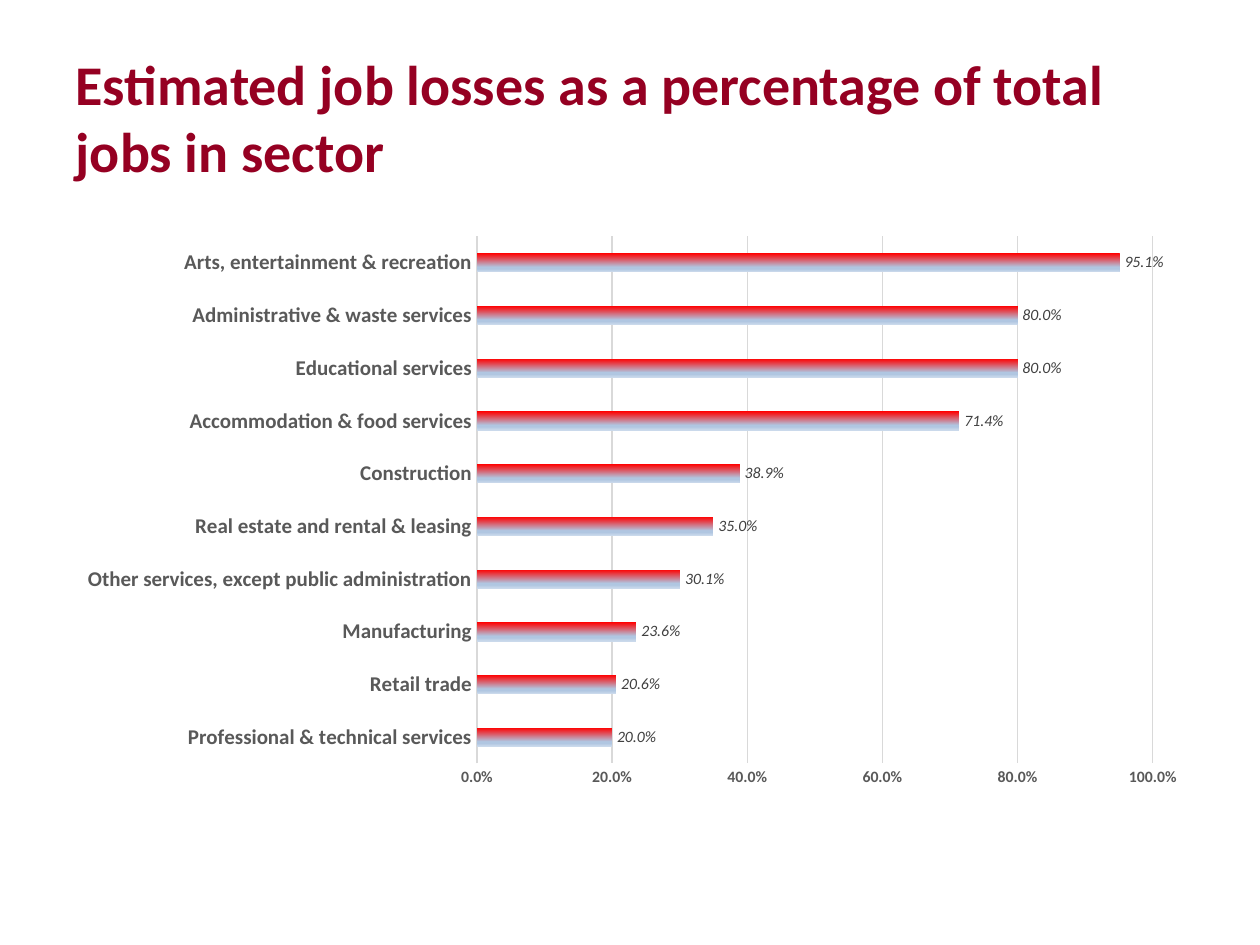
from dataclasses import dataclass

from lxml.etree import SubElement
from pptx import Presentation
from pptx.chart.data import CategoryChartData
from pptx.dml.color import RGBColor
from pptx.enum.chart import XL_CHART_TYPE, XL_LABEL_POSITION, XL_TICK_MARK
from pptx.enum.text import MSO_ANCHOR, PP_ALIGN
from pptx.oxml import parse_xml
from pptx.oxml.ns import nsdecls, qn
from pptx.util import Pt

EMU_PER_PX = 9144
TITLE = "Estimated job losses as a percentage of total jobs in sector"
JOB_LOSSES = {
    "Professional & technical services": 0.2,
    "Retail trade": 0.206,
    "Manufacturing": 0.236,
    "Other services, except public administration": 0.301,
    "Real estate and rental & leasing": 0.35,
    "Construction": 0.389,
    "Accommodation & food services": 0.714,
    "Educational services": 0.8,
    "Administrative & waste services": 0.8,
    "Arts, entertainment & recreation": 0.951,
}


@dataclass(frozen=True)
class Theme:
    """Colours, type sizes and formats of the deck."""

    font: str = "Calibri"
    title: str = "950022"
    axis: str = "595959"
    label: str = "404040"
    grid: str = "D9D9D9"
    bar_stops: tuple = ((0, "FF0000"), (74, "B0C6E1"), (83, "B0C6E1"), (100, "CAD9EB"))
    title_size: int = 32
    category_size: int = 12
    small_size: int = 9
    line_width: float = 0.75
    percent: str = "0.0%"


def px(*lengths):
    """Turn pixel lengths into EMU."""
    return [length * EMU_PER_PX for length in lengths]


class SlideBuilder:
    """Holds the theme and the current slide."""

    def __init__(self, page, theme):
        """Keep the page and its theme."""
        self.page = page
        self.theme = theme

    def style_font(self, font, size, color, bold=False, italic=False):
        """Apply the theme face with the given size and colour."""
        font.name = self.theme.font
        font.size = Pt(size)
        font.bold = bold
        font.italic = italic
        font.color.rgb = RGBColor.from_string(color)

    def style_line(self, line):
        """Draw a thin grid-coloured line."""
        line.color.rgb = RGBColor.from_string(self.theme.grid)
        line.width = Pt(self.theme.line_width)

    def add_title(self, text, left, top, width, height):
        """Fill and place the title placeholder."""
        box = self.page.shapes.title
        box.left, box.top, box.width, box.height = px(left, top, width, height)
        frame = box.text_frame
        frame.text = text
        frame.word_wrap = True
        frame.vertical_anchor = MSO_ANCHOR.MIDDLE
        para = frame.paragraphs[0]
        para.alignment = PP_ALIGN.LEFT
        self.style_font(para.font, self.theme.title_size, self.theme.title, bold=True)

    def add_bar_chart(self, values, left, top, width, height, plot_area):
        """Add a horizontal percentage bar chart."""
        data = CategoryChartData(number_format=self.theme.percent)
        data.categories = list(values)
        data.add_series("Series 1", list(values.values()))
        frame = self.page.shapes.add_chart(
            XL_CHART_TYPE.BAR_CLUSTERED, *px(left, top, width, height), data
        )
        chart = frame.chart
        chart.has_title = False
        chart.has_legend = False
        chart.font.name = self.theme.font
        chart.font.size = Pt(10)
        self.place_plot(chart, plot_area)
        self.style_axes(chart)
        self.style_bars(chart.plots[0])

    def place_plot(self, chart, plot_area):
        """Fix the inner plot area as fractions of the chart."""
        area = chart._chartSpace.find(".//" + qn("c:plotArea"))
        for old in area.findall(qn("c:layout")):
            area.remove(old)
        layout = parse_xml(f"<c:layout {nsdecls('c')}/>")
        manual = SubElement(layout, qn("c:manualLayout"))
        settings = {"layoutTarget": "inner", "xMode": "edge", "yMode": "edge"}
        settings.update(zip("xywh", plot_area))
        for name, value in settings.items():
            SubElement(manual, qn(f"c:{name}"), val=str(value))
        area.insert(0, layout)

    def style_axes(self, chart):
        """Format the category and percentage axes."""
        categories, percentages = chart.category_axis, chart.value_axis
        sizes = (self.theme.category_size, self.theme.small_size)
        for axis, size in zip((categories, percentages), sizes):
            axis.major_tick_mark = axis.minor_tick_mark = XL_TICK_MARK.NONE
            self.style_font(axis.tick_labels.font, size, self.theme.axis, bold=True)
        self.style_line(categories.format.line)
        percentages.format.line.fill.background()
        percentages.minimum_scale = 0
        percentages.maximum_scale = 1
        percentages.major_unit = 0.2
        percentages.has_major_gridlines = True
        self.style_line(percentages.major_gridlines.format.line)
        percentages.tick_labels.number_format = self.theme.percent
        percentages.tick_labels.number_format_is_linked = False

    def style_bars(self, plot):
        """Give the bars their gradient and value labels."""
        plot.gap_width = 182
        plot.vary_by_categories = False
        series = plot.series[0]
        series.invert_if_negative = False
        fill = series.format.fill
        fill.gradient()
        fill.gradient_angle = 270
        stops = series._element.find(".//" + qn("a:gsLst"))
        for old in list(stops):
            stops.remove(old)
        for percent, color in self.theme.bar_stops:
            stop = SubElement(stops, qn("a:gs"), pos=str(percent * 1000))
            SubElement(stop, qn("a:srgbClr"), val=color)
        labels = series.data_labels
        labels.show_value = True
        labels.position = XL_LABEL_POSITION.OUTSIDE_END
        labels.number_format = self.theme.percent
        labels.number_format_is_linked = False
        self.style_font(labels.font, self.theme.small_size, self.theme.label, italic=True)


def main():
    """Build and save the deck."""
    deck = Presentation()
    deck.slide_width, deck.slide_height = px(1000, 750)
    page = deck.slides.add_slide(deck.slide_layouts.get_by_name("Title Only"))
    builder = SlideBuilder(page, Theme())
    builder.add_title(TITLE, 50, 30, 900, 125)
    builder.add_bar_chart(JOB_LOSSES, 50, 175, 900, 466, (0.365, 0.027, 0.596, 0.898))
    deck.save("out.pptx")


if __name__ == "__main__":
    main()
